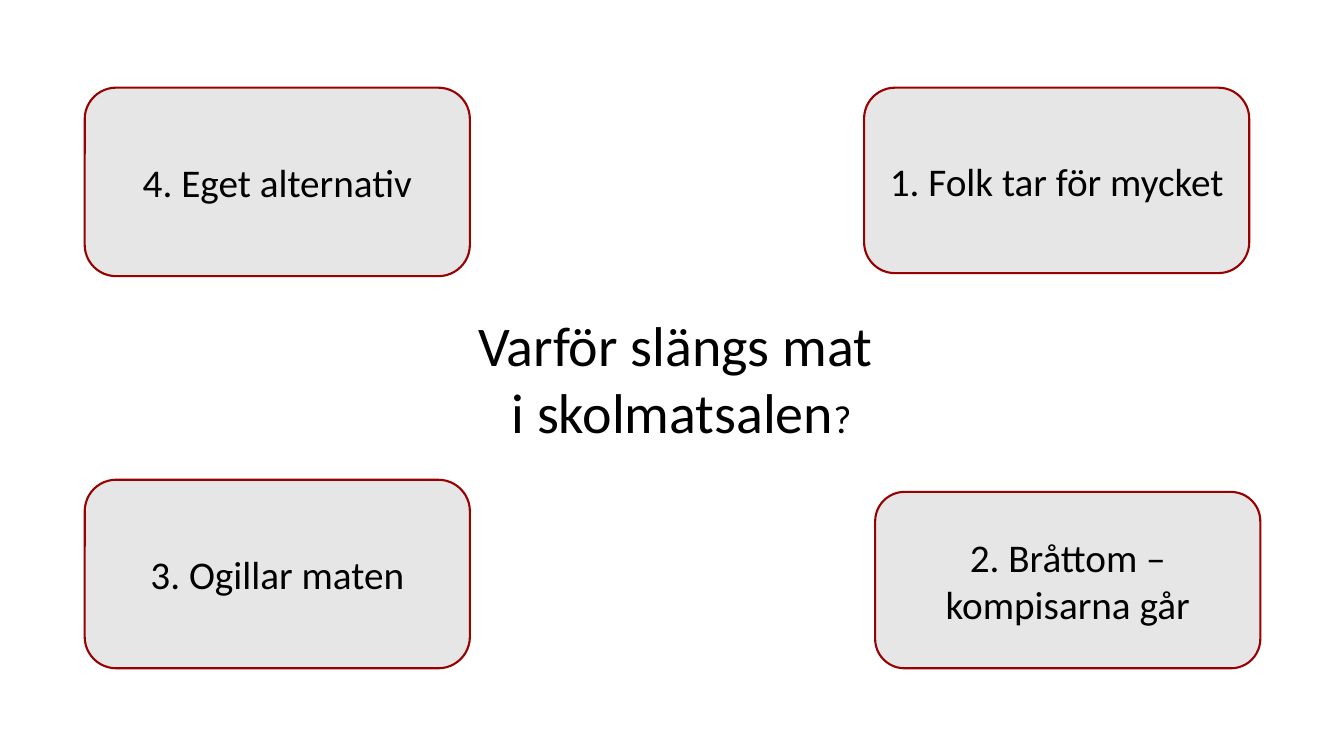
from pptx import Presentation
from pptx.dml.color import RGBColor
from pptx.enum.shapes import MSO_SHAPE
from pptx.enum.text import MSO_ANCHOR, MSO_AUTO_SIZE, PP_ALIGN
from pptx.util import Inches, Pt

COLORS = {"text": "000000", "fill": "E6E6E6", "edge": "990000"}
WIDTH = 3.82
LEFT = 0.84
TOP = 0.87


def color(name):
    return RGBColor.from_string(COLORS[name])


class Board:
    def __init__(self, deck):
        self.slide = deck.slides.add_slide(deck.slide_layouts[5])
        self.font = {"name": "Calibri", "bold": False}

    def label(self, para, text, size):
        """Add runs in the board's font; a line feed becomes a line break."""
        para.alignment = PP_ALIGN.CENTER
        for i, line in enumerate(text.split("\n")):
            if i:
                para.add_line_break()
            run = para.add_run()
            run.text = line
            for key, value in {**self.font, "size": Pt(size)}.items():
                setattr(run.font, key, value)
            run.font.color.rgb = color("text")

    def frame(self, shape, anchor, fit):
        """Set up the shape's text frame and return its first paragraph."""
        style = {"word_wrap": True, "vertical_anchor": anchor, "auto_size": fit}
        for key, value in style.items():
            setattr(shape.text_frame, key, value)
        return shape.text_frame.paragraphs[0]

    def title(self, parts, left, top, width, height):
        shape = self.slide.shapes.title
        place = {"left": left, "top": top, "width": width, "height": height}
        for key, value in place.items():
            setattr(shape, key, Inches(value))
        para = self.frame(shape, MSO_ANCHOR.TOP, MSO_AUTO_SIZE.SHAPE_TO_FIT_TEXT)
        for text, size in parts:
            self.label(para, text, size)

    def card(self, text, left, top, height):
        shape = self.slide.shapes.add_shape(
            MSO_SHAPE.ROUNDED_RECTANGLE,
            Inches(left), Inches(top), Inches(WIDTH), Inches(height))
        shape.shadow.inherit = False
        shape.fill.solid()
        shape.fill.fore_color.rgb = color("fill")
        shape.line.color.rgb = color("edge")
        shape.line.width = Pt(1.5)
        para = self.frame(shape, MSO_ANCHOR.MIDDLE, MSO_AUTO_SIZE.NONE)
        self.label(para, text, 28)


def main():
    deck = Presentation()
    deck.slide_width = Inches(13.33)
    deck.slide_height = Inches(7.5)
    board = Board(deck)
    board.title([("Varför slängs mat \ni skolmatsalen", 40), ("?", 28)],
                4.09, 3.03, 5.34, 1.45)
    cards = [
        ("2. Bråttom – kompisarna går", 8.68, 4.88, 1.75),
        ("1. Folk tar för mycket", 8.57, TOP, 1.84),
        ("4. Eget alternativ", LEFT, TOP, 1.87),
        ("3. Ogillar maten", LEFT, 4.76, 1.87),
    ]
    for card in cards:
        board.card(*card)
    deck.save("out.pptx")


if __name__ == "__main__":
    main()
